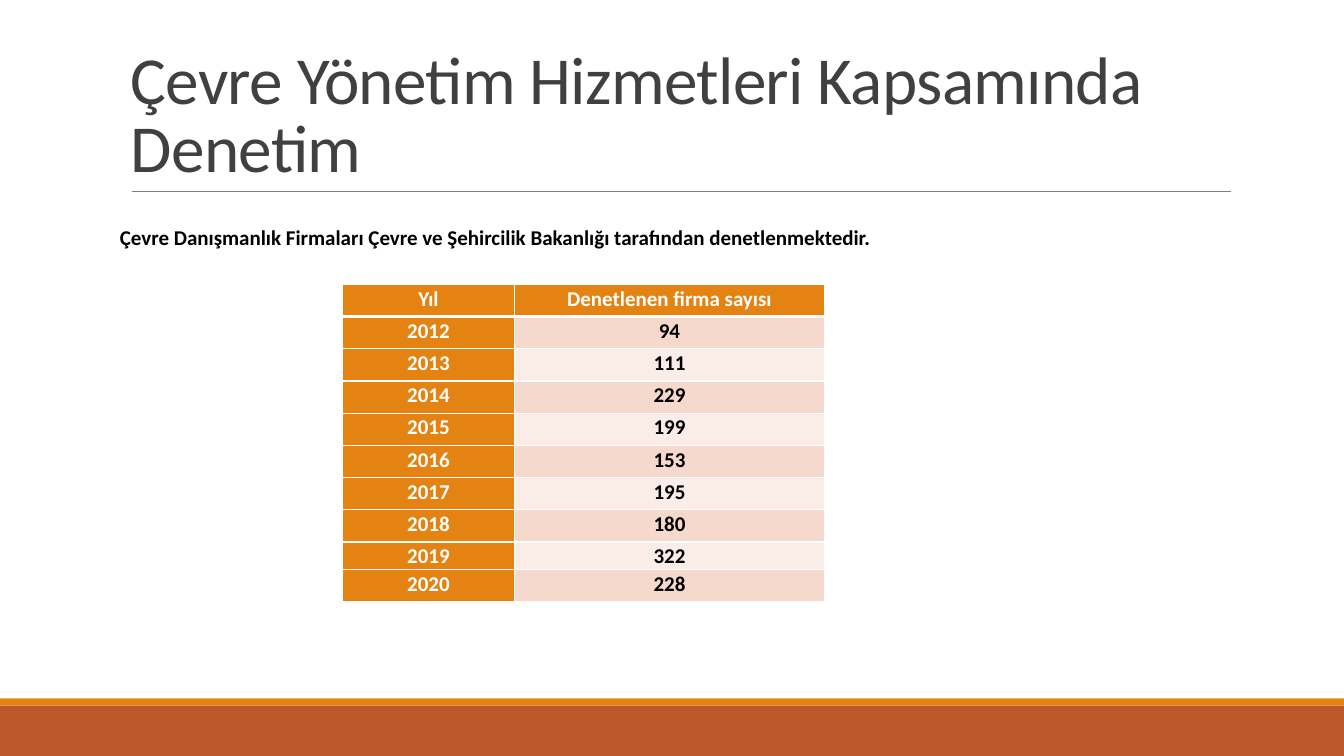
"""Build the slide on inspections of environmental consultancy firms."""
import lxml.etree
import pptx
import pptx.dml.color
import pptx.enum.shapes
import pptx.enum.text
import pptx.oxml
import pptx.oxml.ns
import pptx.util

Inches = pptx.util.Inches
Pt = pptx.util.Pt
align = pptx.enum.text.PP_ALIGN
anchor = pptx.enum.text.MSO_ANCHOR
qn = pptx.oxml.ns.qn


def tint(color, value):
    color.rgb = pptx.dml.color.RGBColor.from_string(value)


def write(para, text, size, color, bold=False):
    run = para.add_run()
    run.text = text
    form = {"name": "Calibri", "size": Pt(size), "bold": bold}
    for key, value in form.items():
        setattr(run.font, key, value)
    tint(run.font.color, color)
    return run


deck = pptx.Presentation()
deck.slide_width, deck.slide_height = Inches(13.33), Inches(7.5)
slide = deck.slides.add_slide(deck.slide_layouts[6])
shapes = slide.shapes

for top, height, color in [(7, 0.5, "BD582C"), (6.93, 0.07, "E48312")]:
    band = shapes.add_shape(pptx.enum.shapes.MSO_SHAPE.RECTANGLE,
                            0, Inches(top), Inches(13.33), Inches(height))
    band.shadow.inherit = False
    band.fill.solid()
    tint(band.fill.fore_color, color)
    band.line.fill.background()

rule = shapes.add_connector(pptx.enum.shapes.MSO_CONNECTOR.STRAIGHT,
                            Inches(1.31), Inches(1.9), Inches(12.21), Inches(1.9))
tint(rule.line.color, "808080")
rule.line.width = Pt(0.5)
lxml.etree.SubElement(rule._element.spPr, qn("a:effectLst"))

title = shapes.add_textbox(Inches(1.2), Inches(0.31), Inches(11), Inches(1.59))
frame = title.text_frame
frame.word_wrap = True
frame.vertical_anchor = anchor.BOTTOM
para = frame.paragraphs[0]
para.line_spacing = 0.85
run = write(para, "Çevre Yönetim Hizmetleri Kapsamında Denetim", 48, "404040")
run._r.get_or_add_rPr().set("spc", "-50")

rows = [("Yıl", "Denetlenen firma sayısı"), ("2012", "94"), ("2013", "111"),
        ("2014", "229"), ("2015", "199"), ("2016", "153"), ("2017", "195"),
        ("2018", "180"), ("2019", "322"), ("2020", "228")]
grid = shapes.add_table(len(rows), 2, Inches(3.4), Inches(2.82),
                        Inches(4.78), Inches(3.15)).table
for col, width in zip(grid.columns, [1.7, 3.08]):
    col.width = Inches(width)

pad = {"margin_left": Inches(0.07), "margin_right": Inches(0.07),
       "margin_top": 0, "margin_bottom": 0}
lay = {"alignment": align.CENTER, "line_spacing": 1.07, "space_after": Pt(8)}
for r, row in enumerate(rows):
    grid.rows[r].height = Inches(0.27 if row[0] == "2019" else 0.32)
    for c, text in enumerate(row):
        cell = grid.cell(r, c)
        for key, value in pad.items():
            setattr(cell, key, value)
        para = cell.text_frame.paragraphs[0]
        for key, value in lay.items():
            setattr(para, key, value)
        head = r == 0 or c == 0
        write(para, text, 15, "FFFFFF" if head else "000000", True)
        cell.fill.solid()
        shade = "F5D9CC" if r % 2 else "FAEDE7"
        tint(cell.fill.fore_color, "E48312" if head else shade)
        props = cell._tc.get_or_add_tcPr()
        for n, side in enumerate("LRTB"):
            thick = (side == "B" and r == 0) or (side == "T" and r == 1)
            edge = lxml.etree.Element(qn("a:ln" + side), w=str(Pt(3 if thick else 1)))
            fill = lxml.etree.SubElement(edge, qn("a:solidFill"))
            lxml.etree.SubElement(fill, qn("a:srgbClr"), val="FFFFFF")
            props.insert(n, edge)

note = shapes.add_textbox(Inches(1.09), Inches(2.18), Inches(7.67), Inches(0.35))
frame = note.text_frame
frame.word_wrap = False
frame.auto_size = pptx.enum.text.MSO_AUTO_SIZE.SHAPE_TO_FIT_TEXT
frame.vertical_anchor = anchor.MIDDLE
write(frame.paragraphs[0],
      "Çevre Danışmanlık Firmaları Çevre ve Şehircilik Bakanlığı tarafından denetlenmektedir.",
      15, "000000", True)

deck.save("out.pptx")
